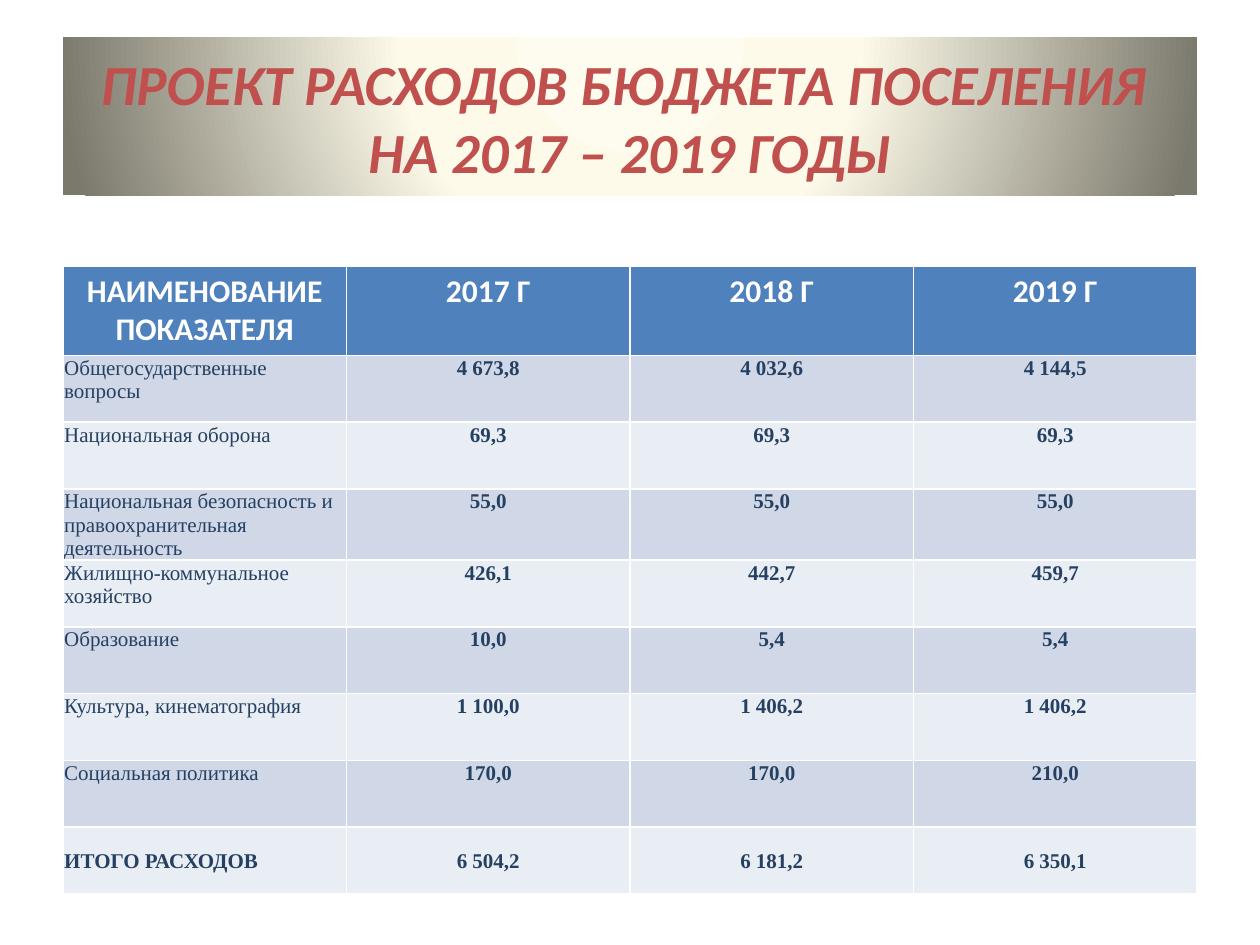
from dataclasses import dataclass

from lxml import etree
from pptx import Presentation
from pptx.dml.color import RGBColor
from pptx.enum.text import MSO_ANCHOR, MSO_AUTO_SIZE, PP_ALIGN
from pptx.util import Inches, Pt

CENTER, LEFT = PP_ALIGN.CENTER, PP_ALIGN.LEFT
TOP, MIDDLE = MSO_ANCHOR.TOP, MSO_ANCHOR.MIDDLE
NO_AUTOFIT = MSO_AUTO_SIZE.NONE
DRAWING_NS = "http://schemas.openxmlformats.org/drawingml/2006/main"

COLORS = {
    "title": "C0504D",
    "header": "4F81BD",
    "header_text": "FFFFFF",
    "body_text": "254061",
    "odd_row": "D0D8E8",
    "even_row": "E9EDF4",
}
BANNER_STOPS = [(0, "FEFCEE"), (40, "FDFAEA"), (100, "7B796B")]
MARGIN, CONTENT_WIDTH = 0.5, 9
ROW_HEIGHT = 0.53


@dataclass
class TextStyle:
    font: str
    size: float
    color: str
    bold: bool = True
    italic: bool = False


@dataclass
class Expense:
    name: str
    amounts: tuple[str, str, str]
    total: bool = False


TITLE_STYLE = TextStyle("Calibri", 32.4, "title", italic=True)
HEADER_STYLE = TextStyle("Calibri", 18, "header_text")
NAME_STYLE = TextStyle("Times New Roman", 12, "body_text", bold=False)
AMOUNT_STYLE = TextStyle("Times New Roman", 12, "body_text")

HEADINGS = ["НАИМЕНОВАНИЕ ПОКАЗАТЕЛЯ", "2017 Г", "2018 Г", "2019 Г"]
EXPENSES = [
    Expense("Общегосударственные вопросы", ("4 673,8", "4 032,6", "4 144,5")),
    Expense("Национальная оборона", ("69,3", "69,3", "69,3")),
    Expense("Национальная безопасность и правоохранительная деятельность",
            ("55,0", "55,0", "55,0")),
    Expense("Жилищно-коммунальное хозяйство", ("426,1", "442,7", "459,7")),
    Expense("Образование", ("10,0", "5,4", "5,4")),
    Expense("Культура, кинематография", ("1 100,0", "1 406,2", "1 406,2")),
    Expense("Социальная политика", ("170,0", "170,0", "210,0")),
    Expense("ИТОГО РАСХОДОВ", ("6 504,2", "6 181,2", "6 350,1"), total=True),
]


def write(frame, text: str, style: TextStyle, align) -> None:
    frame.text = text
    for paragraph in frame.paragraphs:
        paragraph.alignment = align
        for run in paragraph.runs:
            run.font.name = style.font
            run.font.size = Pt(style.size)
            run.font.bold = style.bold
            run.font.italic = style.italic
            run.font.color.rgb = RGBColor.from_string(COLORS[style.color])


def fill_banner(banner) -> None:
    stops = "".join(
        f'<a:gs pos="{position * 1000}"><a:srgbClr val="{color}"/></a:gs>'
        for position, color in BANNER_STOPS)
    banner._element.spPr.append(etree.fromstring(
        f'<a:gradFill xmlns:a="{DRAWING_NS}" rotWithShape="1"><a:gsLst>{stops}</a:gsLst>'
        '<a:path path="circle"><a:fillToRect l="50000" t="-80000" r="50000" b="180000"/>'
        '</a:path></a:gradFill>'))


def draw_title(banner) -> None:
    banner.left, banner.top = Inches(MARGIN), Inches(0.3)
    banner.width, banner.height = Inches(CONTENT_WIDTH), Inches(1.25)
    fill_banner(banner)
    frame = banner.text_frame
    frame.auto_size = NO_AUTOFIT
    frame.word_wrap = True
    frame.vertical_anchor = MIDDLE
    write(frame, "ПРОЕКТ РАСХОДОВ БЮДЖЕТА ПОСЕЛЕНИЯ \vНА 2017 – 2019 ГОДЫ",
          TITLE_STYLE, CENTER)


def paint(cell, color: str) -> None:
    cell.fill.solid()
    cell.fill.fore_color.rgb = RGBColor.from_string(COLORS[color])


def draw_expense(cells, expense: Expense, color: str) -> None:
    for column, (cell, text) in enumerate(zip(cells, (expense.name, *expense.amounts))):
        is_name = column == 0
        style = NAME_STYLE if is_name and not expense.total else AMOUNT_STYLE
        paint(cell, color)
        cell.margin_left = cell.margin_right = cell.margin_top = Inches(0.01)
        cell.margin_bottom = 0
        cell.vertical_anchor = MIDDLE if expense.total else TOP
        write(cell.text_frame, text, style, LEFT if is_name else CENTER)


def draw_budget(slide) -> None:
    row_count = len(EXPENSES) + 1
    budget = slide.shapes.add_table(
        row_count, len(HEADINGS), Inches(MARGIN), Inches(2.11),
        Inches(CONTENT_WIDTH), Inches(ROW_HEIGHT * row_count)).table
    for row in budget.rows:
        row.height = Inches(ROW_HEIGHT)
    for cell, heading in zip(budget.rows[0].cells, HEADINGS):
        paint(cell, "header")
        write(cell.text_frame, heading, HEADER_STYLE, CENTER)
    for number, expense in enumerate(EXPENSES, start=1):
        draw_expense(budget.rows[number].cells, expense,
                     "odd_row" if number % 2 else "even_row")


def main() -> None:
    presentation = Presentation()
    presentation.slide_width, presentation.slide_height = Inches(10), Inches(7.5)
    slide = presentation.slides.add_slide(presentation.slide_layouts[5])
    draw_title(slide.shapes.title)
    draw_budget(slide)
    presentation.save("out.pptx")


if __name__ == "__main__":
    main()
